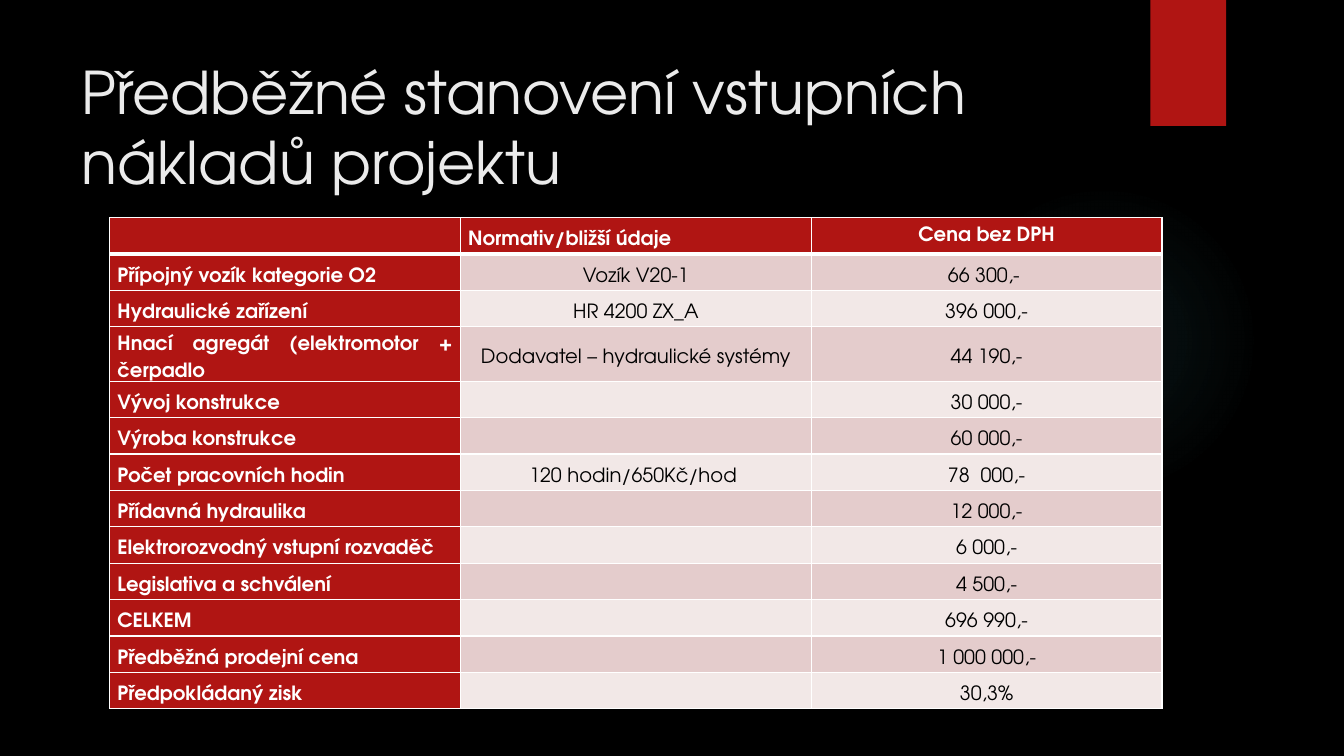
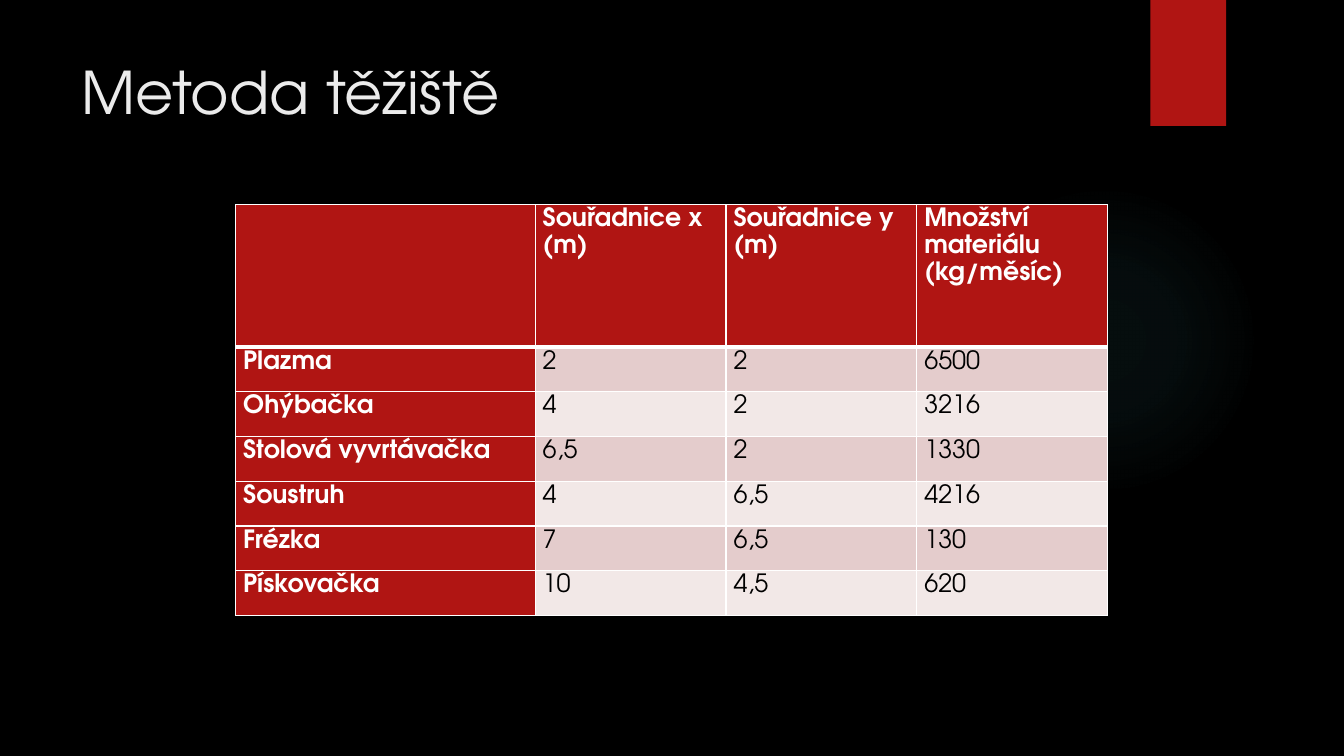
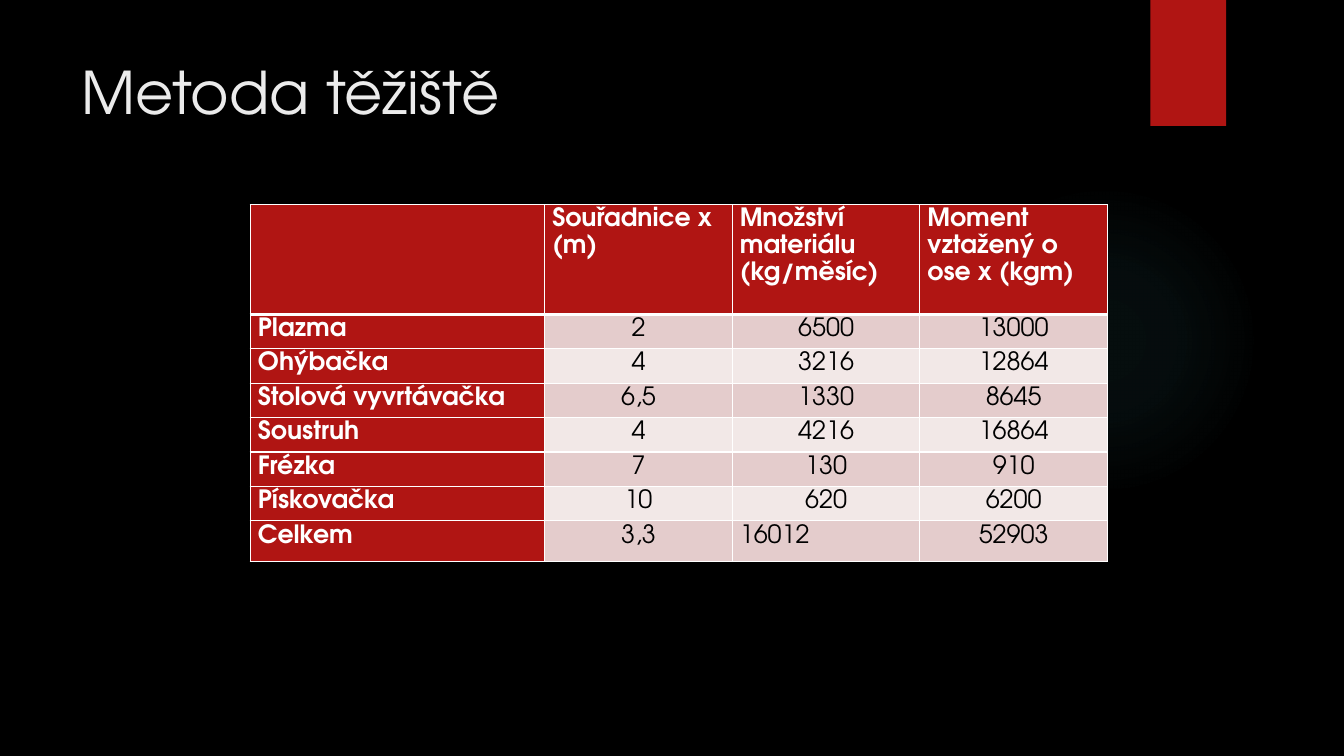
from dataclasses import dataclass, field

from pptx import Presentation
from pptx import util as u
from pptx.dml.color import RGBColor
from pptx.enum import shapes, text
from pptx.oxml import parse_xml
from pptx.oxml import ns

# Theme
FONT = "TeX Gyre Adventor"
BLACK = RGBColor(0x00, 0x00, 0x00)
WHITE = RGBColor(0xFF, 0xFF, 0xFF)
TITLE_GREY = RGBColor(0xEB, 0xEB, 0xEB)
RED = RGBColor(0xB0, 0x15, 0x13)
GLOW = RGBColor(0x50, 0xB9, 0xC1)
ROW_DARK = RGBColor(0xE4, 0xCC, 0xCC)
ROW_LIGHT = RGBColor(0xF2, 0xE8, 0xE7)

LEFT, CENTER, JUSTIFY = text.PP_ALIGN.LEFT, text.PP_ALIGN.CENTER, text.PP_ALIGN.JUSTIFY
TOP, MIDDLE = text.MSO_ANCHOR.TOP, text.MSO_ANCHOR.MIDDLE
Position = tuple[int, int]


@dataclass
class TableSlide:
    title: str
    left: float
    top: float
    columns: list[float]
    heights: list[float]
    rows: list[list[str]]
    size: float = 18
    spacing: float = 1.15
    anchor: text.MSO_ANCHOR = TOP
    label_align: text.PP_ALIGN = LEFT
    value_align: text.PP_ALIGN = LEFT
    # Cells that depart from the table's alignment or anchor
    aligns: dict[Position, text.PP_ALIGN] = field(default_factory=dict)
    anchors: dict[Position, text.MSO_ANCHOR] = field(default_factory=dict)


COSTS = TableSlide(
    "Předběžné stanovení vstupních nákladů projektu",
    left=78.5, top=155.5, columns=[250.5] * 3, heights=[26] * 13,
    size=14, spacing=1.5, anchor=MIDDLE, label_align=JUSTIFY, value_align=CENTER,
    aligns={(0, 1): JUSTIFY}, anchors={(0, 2): TOP},
    rows=[
        ["", "Normativ/bližší údaje", "Cena bez DPH"],
        ["Přípojný vozík kategorie O2", "Vozík V20-1", "66 300,- "],
        ["Hydraulické zařízení", "HR 4200 ZX_A", "396 000,-"],
        ["Hnací agregát (elektromotor + čerpadlo", "Dodavatel – hydraulické systémy", "44 190,-"],
        ["Vývoj konstrukce", "", "30 000,-"],
        ["Výroba konstrukce", "", "60 000,-"],
        ["Počet pracovních hodin", "120 hodin/650Kč/hod ", "78  000,-"],
        ["Přídavná hydraulika", "", "12 000,-"],
        ["Elektrorozvodný vstupní rozvaděč", "", "6 000,-"],
        ["Legislativa a schválení", "", "4 500,-"],
        ["CELKEM", "", "696 990,-"],
        ["Předběžná prodejní cena", "", "1 000 000,-"],
        ["Předpokládaný zisk", "", "30,3%"],
    ],
)

COORDINATES = TableSlide(
    "Metoda těžiště",
    left=168.3, top=146.3, columns=[214] + [136.3] * 3, heights=[101.5] + [32] * 6,
    rows=[
        ["", "Souřadnice x (m)", "Souřadnice y (m)", "Množství materiálu (kg/měsíc)"],
        ["Plazma", "2", "2", "6500"],
        ["Ohýbačka", "4", "2", "3216"],
        ["Stolová vyvrtávačka", "6,5", "2", "1330"],
        ["Soustruh", "4", "6,5", "4216"],
        ["Frézka", "7", "6,5", "130"],
        ["Pískovačka", "10", "4,5", "620"],
    ],
)

MOMENTS = TableSlide(
    "Metoda těžiště",
    left=178.8, top=146.3, columns=[210.3] + [134] * 3,
    heights=[78.3] + [24.6] * 6 + [28.8], value_align=CENTER,
    aligns={(0, 1): LEFT, (0, 2): LEFT, (0, 3): LEFT, (7, 2): LEFT},
    rows=[
        ["", "Souřadnice x (m)", "Množství materiálu (kg/měsíc)", "Moment vztažený o ose x (kgm)"],
        ["Plazma", "2", "6500", "13000"],
        ["Ohýbačka", "4", "3216", "12864"],
        ["Stolová vyvrtávačka", "6,5", "1330", "8645"],
        ["Soustruh", "4", "4216", "16864"],
        ["Frézka", "7", "130", "910"],
        ["Pískovačka", "10", "620", "6200"],
        ["Celkem", "3,3", "16012", "52903"],
    ],
)


def write(frame, content: str, *, size: float, color: RGBColor, bold: bool = False,
          align: text.PP_ALIGN = LEFT, spacing: float = 1.0) -> None:
    paragraph = frame.paragraphs[0]
    paragraph.alignment = align
    paragraph.line_spacing = spacing
    if not content:
        return
    run = paragraph.add_run()
    run.text = content
    run.font.name = FONT
    run.font.size = u.Pt(size)
    run.font.bold = bold
    run.font.color.rgb = color


def add_decoration(slide, kind, left: float, top: float, width: float, height: float):
    shape = slide.shapes.add_shape(kind, u.Pt(left), u.Pt(top), u.Pt(width), u.Pt(height))
    shape.shadow.inherit = False
    shape.line.fill.background()
    return shape


def style_layout(layout, slide) -> None:
    """Give the layout its background, title place, glow and red bookmark."""
    layout.background.fill.solid()
    layout.background.fill.fore_color.rgb = BLACK
    title = layout.placeholders[0]
    title.left, title.top, title.width, title.height = map(u.Pt, (51, 36, 741, 110))

    # Glow: radial gradient fading out
    glow = add_decoration(slide, shapes.MSO_SHAPE.OVAL, 677.5, 131.8, 221.8, 221.8)
    glow.fill.background()
    stops = "".join(
        f'<a:gs pos="{position * 1000}"><a:srgbClr val="{GLOW}">'
        f'<a:alpha val="{alpha * 1000}"/></a:srgbClr></a:gs>'
        for position, alpha in ((0, 7), (36, 6), (69, 0)))
    properties = glow.element.spPr
    properties.replace(properties.find(ns.qn("a:noFill")), parse_xml(
        f'<a:gradFill {ns.nsdecls("a")}><a:gsLst>{stops}</a:gsLst><a:path path="circle">'
        '<a:fillToRect l="50000" t="50000" r="50000" b="50000"/></a:path></a:gradFill>'))

    # Bookmark with a soft shadow below
    bookmark = add_decoration(slide, shapes.MSO_SHAPE.RECTANGLE, 821.8, 0, 54, 90)
    bookmark.fill.solid()
    bookmark.fill.fore_color.rgb = RED
    bookmark.element.spPr.find(ns.qn("a:effectLst")).append(parse_xml(
        f'<a:outerShdw {ns.nsdecls("a")} blurRad="{u.Pt(3)}" dist="{u.Pt(2)}" dir="5400000" '
        f'rotWithShape="0"><a:srgbClr val="{BLACK}"><a:alpha val="45000"/></a:srgbClr></a:outerShdw>'))

    # Move both behind the layout's placeholders
    for index, decoration in enumerate((glow, bookmark), start=2):
        layout.shapes.element.insert(index, decoration.element)


def add_borders(tc, row: int) -> None:
    widths = {"lnL": 1, "lnR": 1, "lnT": 3 if row == 1 else 1, "lnB": 3 if row == 0 else 1}
    properties = tc.find(ns.qn("a:tcPr"))
    for index, (side, width) in enumerate(widths.items()):
        properties.insert(index, parse_xml(
            f'<a:{side} {ns.nsdecls("a")} w="{u.Pt(width)}"><a:solidFill>'
            f'<a:srgbClr val="{WHITE}"/></a:solidFill></a:{side}>'))


def add_table(slide, data: TableSlide) -> None:
    frame = slide.shapes.add_table(
        len(data.rows), len(data.columns), u.Pt(data.left), u.Pt(data.top),
        u.Pt(sum(data.columns)), u.Pt(sum(data.heights)))
    table = frame.table
    for column, width in zip(table.columns, data.columns):
        column.width = u.Pt(width)
    for row, height in zip(table.rows, data.heights):
        row.height = u.Pt(height)

    cells = zip(table.iter_cells(), frame.element.iter(ns.qn("a:tc")))
    for index, (cell, tc) in enumerate(cells):
        row, column = position = divmod(index, len(data.columns))
        heading = row == 0 or column == 0
        cell.margin_left = cell.margin_right = u.Pt(5.4)
        cell.margin_top = cell.margin_bottom = u.Pt(0)
        cell.vertical_anchor = data.anchors.get(position, data.anchor)
        cell.fill.solid()
        cell.fill.fore_color.rgb = RED if heading else ROW_DARK if row % 2 else ROW_LIGHT
        add_borders(tc, row)
        usual_align = data.label_align if column == 0 else data.value_align
        write(cell.text_frame, data.rows[row][column], size=data.size,
              color=WHITE if heading else BLACK, bold=heading,
              align=data.aligns.get(position, usual_align), spacing=data.spacing)


def main() -> None:
    deck = Presentation()
    deck.slide_width, deck.slide_height = u.Pt(960), u.Pt(540)
    layout = deck.slide_layouts.get_by_name("Title Only")
    for number, data in enumerate((COSTS, COORDINATES, MOMENTS)):
        slide = deck.slides.add_slide(layout)
        if number == 0:
            style_layout(layout, slide)
        title = slide.shapes.title.text_frame
        title.vertical_anchor = TOP
        title.auto_size = text.MSO_AUTO_SIZE.NONE
        write(title, data.title, size=42, color=TITLE_GREY)
        add_table(slide, data)
    deck.save("out.pptx")


if __name__ == "__main__":
    main()
